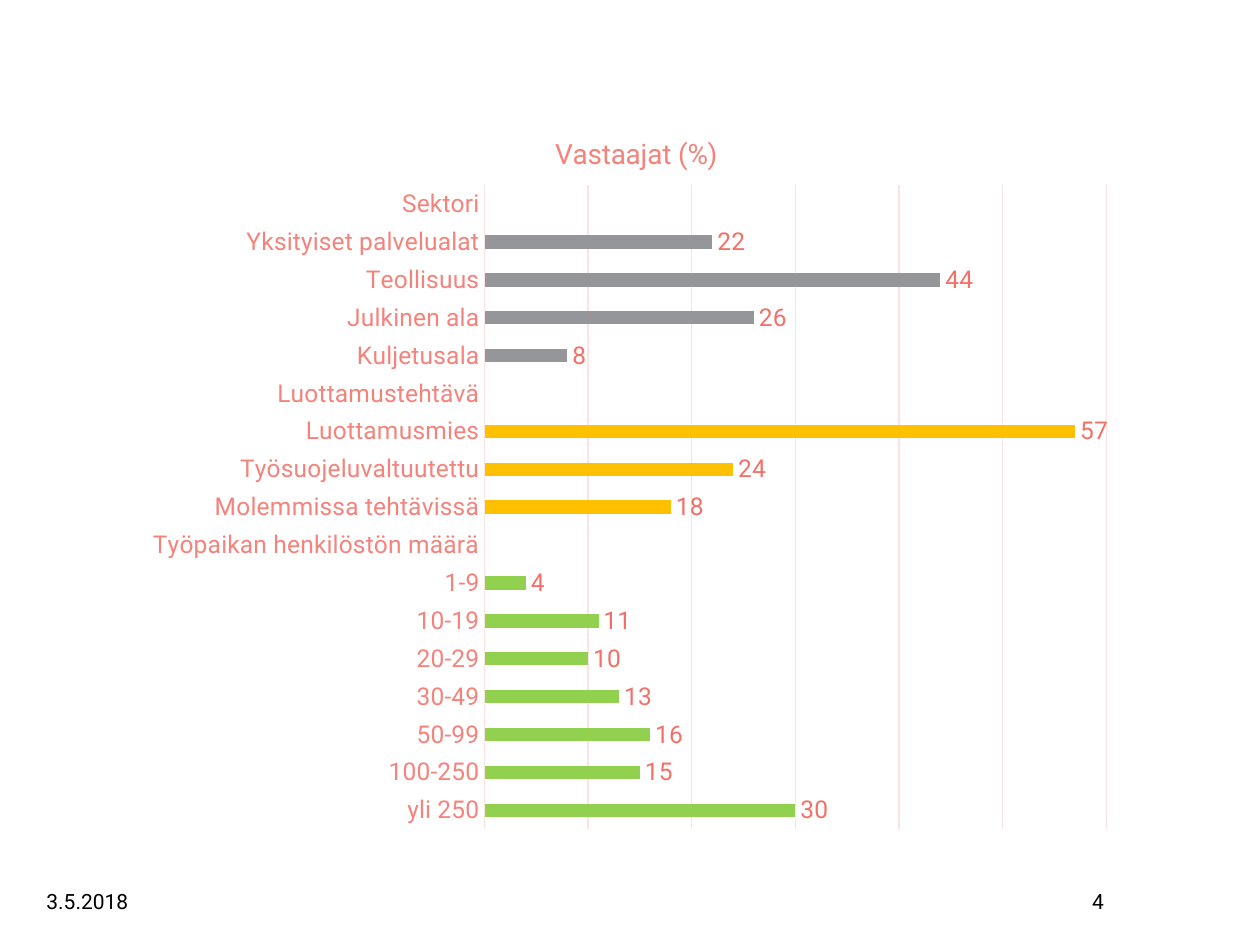
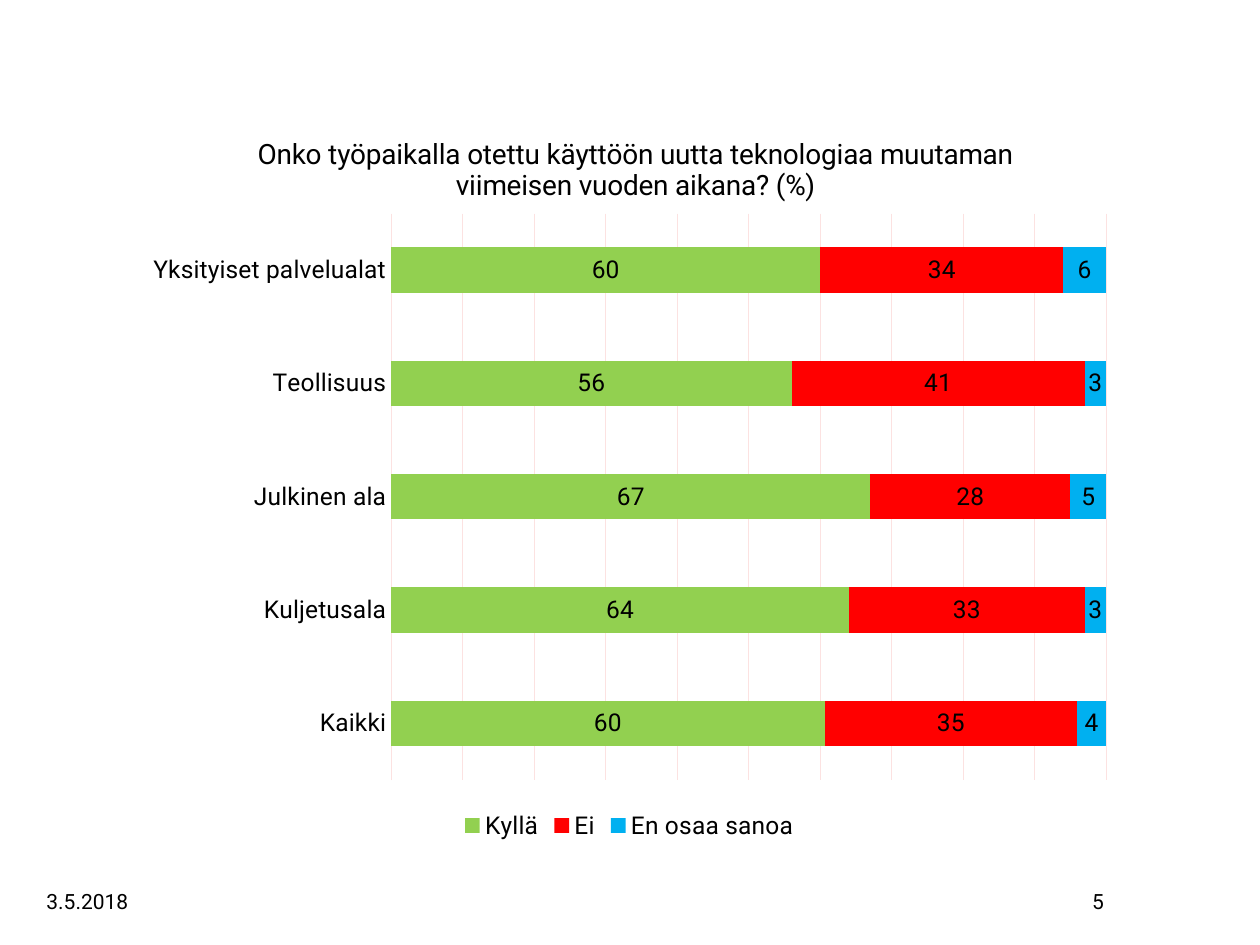
from dataclasses import dataclass

import pptx
import pptx.chart.data
import pptx.dml.color
import pptx.enum.chart
import pptx.enum.text
import pptx.oxml
import pptx.oxml.ns
import pptx.util


@dataclass(frozen=True)
class Theme:
    font: str = "Roboto"
    black: str = "000000"
    grid: str = "FCE2E1"
    coral: str = "F4837C"
    coral_strong: str = "F27068"
    grey: str = "95969A"
    amber: str = "FFC000"
    green: str = "92D050"
    red: str = "FF0000"
    blue: str = "00B0F0"
    title_size: int = 16
    label_size: int = 14
    footer_size: int = 12
    hairline: float = 0.75


THEME = Theme()
SLIDE_WIDTH = pptx.util.Inches(10)
SLIDE_HEIGHT = pptx.util.Inches(7.5)
BLANK_LAYOUT = 6
FIRST_NUMBER = 4
DATE = "3.5.2018"

CHART_AREA = (0.106, 0.107, 0.787, 0.788)
DATE_AREA = (0.027, 0.927, 0.239, 0.053)
NUMBER_AREA = (0.792, 0.927, 0.094, 0.053)

SECTORS = ["Yksityiset palvelualat", "Teollisuus", "Julkinen ala", "Kuljetusala"]
RESPONDENT_GROUPS = [
    ("Sektori", THEME.grey, list(zip(SECTORS, [22, 44, 26, 8]))),
    ("Luottamustehtävä", THEME.amber, [
        ("Luottamusmies", 57),
        ("Työsuojeluvaltuutettu", 24),
        ("Molemmissa tehtävissä", 18),
    ]),
    ("Työpaikan henkilöstön määrä", THEME.green, [
        ("1-9", 4), ("10-19", 11), ("20-29", 10), ("30-49", 13),
        ("50-99", 16), ("100-250", 15), ("yli 250", 30),
    ]),
]
ANSWERS = [
    ("Kyllä", THEME.green, [60, 56, 67, 64, 60]),
    ("Ei", THEME.red, [34, 41, 28, 33, 35]),
    ("En osaa sanoa", THEME.blue, [6, 3, 5, 3, 4]),
]


def rgb(color):
    return pptx.dml.color.RGBColor.from_string(color)


def area(shares):
    sides = (SLIDE_WIDTH, SLIDE_HEIGHT) * 2
    return [round(share * side) for share, side in zip(shares, sides)]


def style_font(font, size, color):
    font.name = THEME.font
    font.size = pptx.util.Pt(size)
    font.bold = False
    font.color.rgb = rgb(color)


def fill_solid(fill, color):
    fill.solid()
    fill.fore_color.rgb = rgb(color)


def style_line(line):
    line.color.rgb = rgb(THEME.grid)
    line.width = pptx.util.Pt(THEME.hairline)


def add_footer_text(slide, text, shares, alignment):
    frame = slide.shapes.add_textbox(*area(shares)).text_frame
    frame.word_wrap = True
    frame.vertical_anchor = pptx.enum.text.MSO_ANCHOR.MIDDLE
    frame.text = text
    paragraph = frame.paragraphs[0]
    paragraph.alignment = alignment
    style_font(paragraph.runs[0].font, THEME.footer_size, THEME.black)


def add_survey_slide(prs, number):
    slide = prs.slides.add_slide(prs.slide_layouts[BLANK_LAYOUT])
    align = pptx.enum.text.PP_ALIGN
    add_footer_text(slide, DATE, DATE_AREA, align.LEFT)
    add_footer_text(slide, str(number), NUMBER_AREA, align.RIGHT)
    return slide


def place_in_chart(chart, part, **shares):
    parent = chart._chartSpace.xpath(f"c:chart/c:{part}")[0]
    for layout in parent.xpath("c:layout"):
        parent.remove(layout)
    target = '<c:layoutTarget val="inner"/>' if part == "plotArea" else ""
    modes = "".join(f'<c:{key}Mode val="edge"/>' for key in ("x", "y"))
    values = "".join(f'<c:{key} val="{share}"/>' for key, share in shares.items())
    layout = pptx.oxml.parse_xml(
        f'<c:layout {pptx.oxml.ns.nsdecls("c")}><c:manualLayout>'
        f"{target}{modes}{values}</c:manualLayout></c:layout>"
    )
    parent.insert(len(parent.xpath("c:tx")), layout)


def add_title(chart, title, color, x, y):
    chart.has_title = True
    frame = chart.chart_title.text_frame
    frame.text = title
    style_font(frame.paragraphs[0].runs[0].font, THEME.title_size, color)
    place_in_chart(chart, "title", x=x, y=y)


def style_axes(chart, color):
    categories = chart.category_axis
    categories.reverse_order = True
    categories.has_major_gridlines = False
    categories.major_tick_mark = pptx.enum.chart.XL_TICK_MARK.NONE
    style_font(categories.tick_labels.font, THEME.label_size, color)
    style_line(categories.format.line)
    chart.value_axis.visible = False
    chart.value_axis.has_major_gridlines = True
    style_line(chart.value_axis.major_gridlines.format.line)


def style_series(series, color, label_color, position):
    fill_solid(series.format.fill, color)
    series.invert_if_negative = False
    labels = series.data_labels
    labels.show_value = True
    labels.position = position
    style_font(labels.font, THEME.label_size, label_color)


def add_bar_chart(slide, kind, categories, series, gap, axis_color):
    data = pptx.chart.data.CategoryChartData()
    data.categories = categories
    for name, values in series:
        data.add_series(name, values)
    chart = slide.shapes.add_chart(kind, *area(CHART_AREA), data).chart
    chart.font.name = THEME.font
    chart.has_legend = False
    chart.plots[0].gap_width = gap
    chart.plots[0].vary_by_categories = False
    style_axes(chart, axis_color)
    return chart


def add_respondents(prs, number):
    rows = []
    for heading, color, members in RESPONDENT_GROUPS:
        rows.append((heading, None, color))
        rows += [(label, share, color) for label, share in members]
    labels, shares, colors = zip(*rows)
    chart = add_bar_chart(
        add_survey_slide(prs, number),
        pptx.enum.chart.XL_CHART_TYPE.BAR_CLUSTERED,
        labels, [("Series 1", shares)], 182, THEME.coral,
    )
    chart.value_axis.minimum_scale = 0
    chart.value_axis.maximum_scale = 60
    chart.value_axis.major_unit = 10
    respondents = chart.plots[0].series[0]
    style_series(respondents, THEME.grey, THEME.coral_strong,
                 pptx.enum.chart.XL_LABEL_POSITION.OUTSIDE_END)
    for index, (share, color) in enumerate(zip(shares, colors)):
        if share is not None and color != THEME.grey:
            fill_solid(respondents.points[index].format.fill, color)
    add_title(chart, "Vastaajat (%)", THEME.coral, x=0.42, y=0.04)
    place_in_chart(chart, "plotArea", x=0.354, y=0.113, w=0.627, h=0.865)


def add_technology_adoption(prs, number):
    chart = add_bar_chart(
        add_survey_slide(prs, number),
        pptx.enum.chart.XL_CHART_TYPE.BAR_STACKED_100,
        SECTORS + ["Kaikki"],
        [(answer, shares) for answer, _, shares in ANSWERS], 150, THEME.black,
    )
    chart.plots[0].overlap = 100
    for series, (_, color, _) in zip(chart.plots[0].series, ANSWERS):
        style_series(series, color, THEME.black,
                     pptx.enum.chart.XL_LABEL_POSITION.CENTER)
    chart.has_legend = True
    chart.legend.position = pptx.enum.chart.XL_LEGEND_POSITION.BOTTOM
    chart.legend.include_in_layout = False
    style_font(chart.legend.font, THEME.label_size, THEME.black)
    add_title(
        chart,
        "Onko työpaikalla otettu käyttöön uutta teknologiaa muutaman "
        "viimeisen vuoden aikana? (%)",
        THEME.black, x=0.12, y=0.04,
    )
    place_in_chart(chart, "plotArea", x=0.26, y=0.151, w=0.721, h=0.761)


def main():
    prs = pptx.Presentation()
    prs.slide_width = SLIDE_WIDTH
    prs.slide_height = SLIDE_HEIGHT
    builders = (add_respondents, add_technology_adoption)
    for number, build in enumerate(builders, FIRST_NUMBER):
        build(prs, number)
    prs.save("out.pptx")


if __name__ == "__main__":
    main()
